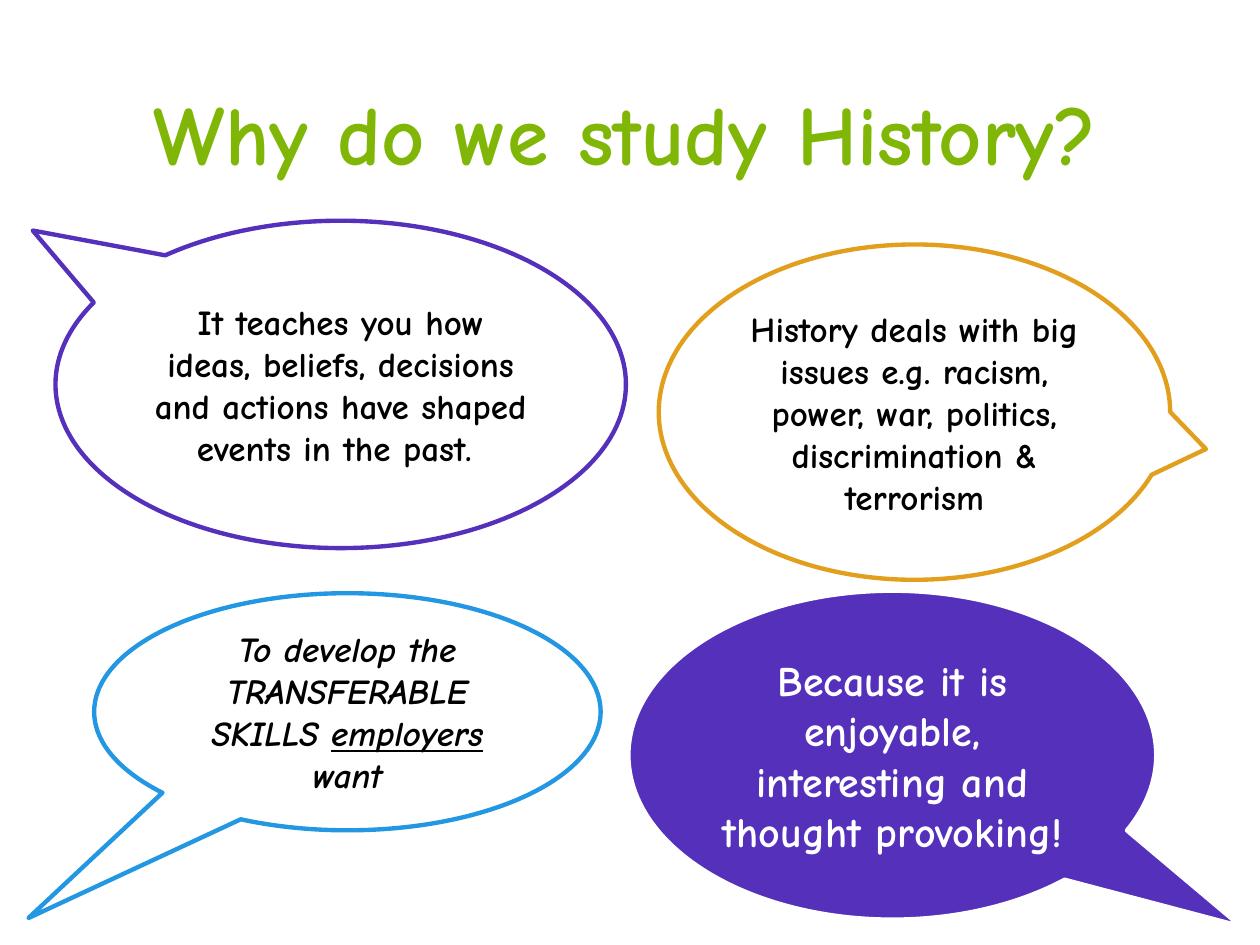
from lxml.etree import SubElement
from pptx import Presentation
from pptx.dml.color import RGBColor
from pptx.enum.shapes import MSO_SHAPE as SHAPE
from pptx.enum.text import MSO_ANCHOR as ANCHOR, MSO_AUTO_SIZE as FIT, PP_ALIGN as ALIGN
from pptx.oxml.ns import qn
from pptx.util import Cm, Pt

FONT = "Comic Neue"
COLORS = {
    "green": "80B606",
    "purple": "5430BB",
    "orange": "E29F1D",
    "blue": "2397E2",
    "black": "000000",
    "white": "FFFFFF",
}


def rgb(name):
    return RGBColor.from_string(COLORS[name])


def add_text(p, text, size=20, color="black", italic=False, underline=False):
    r = p.add_run()
    r.text = text
    f = r.font
    f.name, f.size, f.bold = FONT, Pt(size), True
    f.italic, f.underline = italic, underline
    f.color.rgb = rgb(color)


def add_title(slide, box, text):
    sp = slide.shapes.title
    sp.left, sp.top, sp.width, sp.height = map(Cm, box)
    sp.fill.solid()
    sp.fill.fore_color.rgb = rgb("white")
    color = sp.fill._xPr.find(".//" + qn("a:srgbClr"))
    SubElement(color, qn("a:alpha"), val="29000")
    tf = sp.text_frame
    tf.auto_size, tf.word_wrap = FIT.NONE, True
    tf.vertical_anchor = ANCHOR.TOP
    p = tf.paragraphs[0]
    p.alignment = ALIGN.CENTER
    add_text(p, text, size=48, color="green")


def add_bubble(slide, box, tail, runs, line, fill="white", **style):
    sp = slide.shapes.add_shape(SHAPE.OVAL_CALLOUT, *map(Cm, box))
    sp.adjustments[0], sp.adjustments[1] = tail
    sp.shadow.inherit = False
    sp.fill.solid()
    sp.fill.fore_color.rgb = rgb(fill)
    sp.line.color.rgb = rgb(line)
    sp.line.width = Pt(2.5)
    tf = sp.text_frame
    tf.word_wrap = True
    tf.vertical_anchor = ANCHOR.MIDDLE
    p = tf.paragraphs[0]
    p.alignment = ALIGN.CENTER
    for text, extra in runs:
        add_text(p, text, **style, **extra)


def main():
    prs = Presentation()
    prs.slide_width, prs.slide_height = Cm(25.4), Cm(19.05)
    slide = prs.slides.add_slide(prs.slide_layouts[5])

    add_title(slide, (0.3, 1.52, 24.61, 2.31), "Why do we study History?")
    add_bubble(
        slide, (1.12, 4.45, 11.5, 6.6), (-0.54, -0.47),
        [("It teaches you how ideas, beliefs, decisions and actions "
          "have shaped events in the past. ", {})],
        line="purple",
    )
    add_bubble(
        slide, (13.28, 4.93, 10.31, 6.76), (0.57, 0.11),
        [("History deals with big issues e.g. racism, power, war, politics, "
          "discrimination & terrorism", {})],
        line="orange",
    )
    add_bubble(
        slide, (1.9, 11.96, 10.21, 4.78), (-0.63, 0.87),
        [("To develop the TRANSFERABLE SKILLS ", {}),
         ("employers", {"underline": True}),
         (" want", {})],
        line="blue", italic=True,
    )
    add_bubble(
        slide, (12.67, 11.91, 10.64, 6.63), (0.66, 0.52),
        [("Because it is enjoyable, interesting and thought provoking!", {})],
        line="white", fill="purple", size=24, color="white",
    )
    prs.save("out.pptx")


if __name__ == "__main__":
    main()
